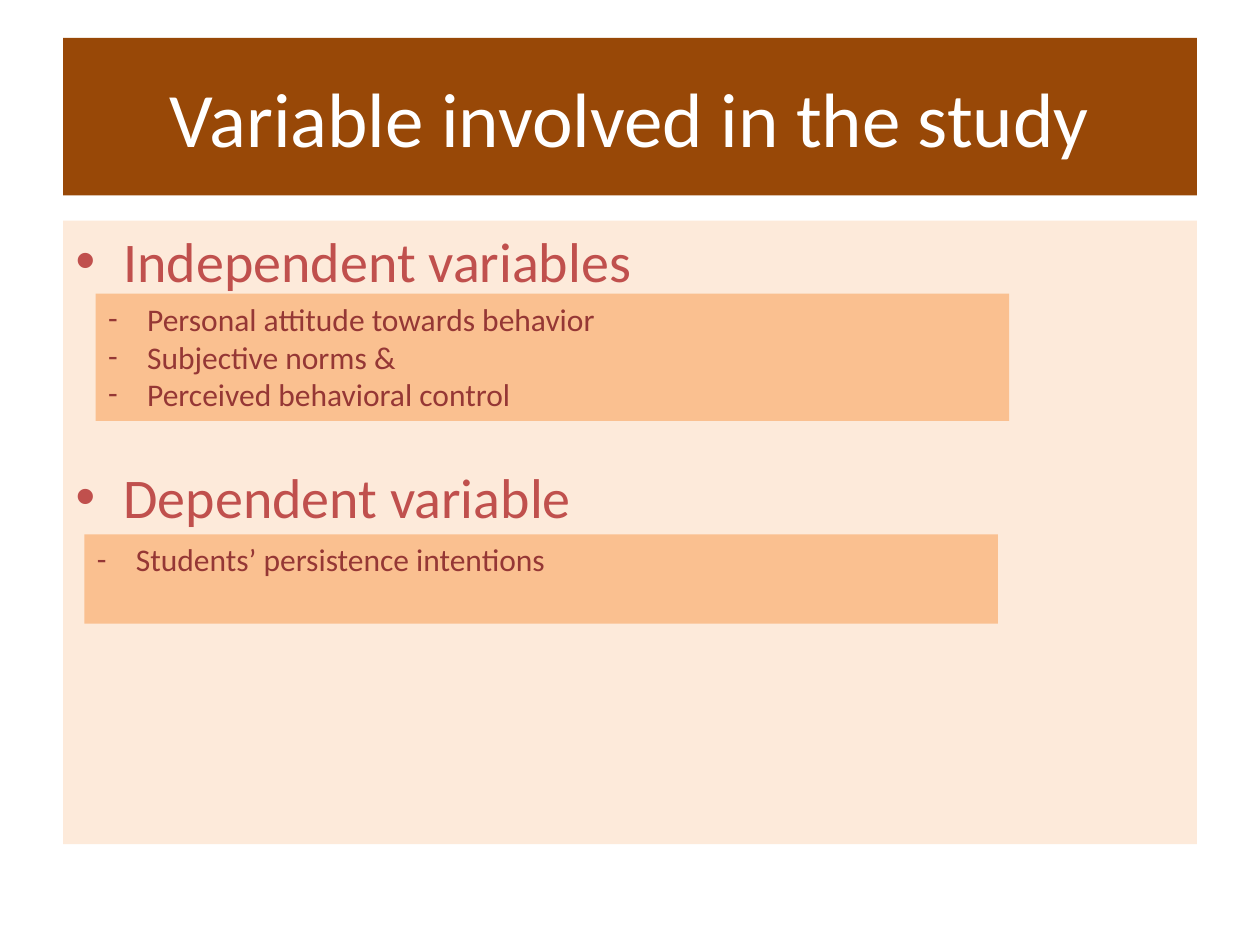
from dataclasses import dataclass

from lxml.etree import SubElement
from pptx import Presentation
from pptx.dml.color import RGBColor
from pptx.enum.shapes import MSO_SHAPE
from pptx.enum.text import MSO_ANCHOR, MSO_AUTO_SIZE, PP_ALIGN
from pptx.oxml.ns import qn
from pptx.util import Inches, Pt


@dataclass(frozen=True)
class Theme:
    font: str = "Calibri"
    banner: str = "984807"
    banner_text: str = "FFFFFF"
    panel: str = "FDEADA"
    heading: str = "C0504D"
    box: str = "FAC090"
    item: str = "953735"
    title_size: int = 44
    heading_size: int = 32
    item_size: int = 18
    heading_gap: int = 96  # room for the item box between two headings


THEME = Theme()
WIDTH, HEIGHT = 10, 7.5
TITLE_BOX = (0.5, 0.3, 9, 1.25)
PANEL_BOX = (0.5, 1.75, 9, 4.95)

# Heading, its items, and the item box relative to the panel
GROUPS = [
    ("Independent variables",
     ["Personal attitude towards behavior", "Subjective norms &",
      "Perceived behavioral control"],
     (0.26, 0.58, 7.25, 1.01)),
    ("Dependent variable",
     ["Students’ persistence intentions"],
     (0.17, 2.49, 7.25, 0.71)),
]


def place(shape, box, fill):
    shape.left, shape.top, shape.width, shape.height = map(Inches, box)
    shape.fill.solid()
    shape.fill.fore_color.rgb = RGBColor.from_string(fill)
    shape.text_frame.word_wrap = True
    shape.text_frame.auto_size = MSO_AUTO_SIZE.NONE


def add_span(para, text, size, color):
    span = para.add_run()
    span.text = text
    span.font.name = THEME.font
    span.font.size = Pt(size)
    span.font.color.rgb = RGBColor.from_string(color)


def set_bullet(para, char, indent, font):
    properties = para._p.get_or_add_pPr()
    properties.set("marL", str(Inches(indent)))
    properties.set("indent", str(-Inches(indent)))
    SubElement(properties, qn("a:buFont")).set("typeface", font)
    SubElement(properties, qn("a:buChar")).set("char", char)


def next_para(frame, index):
    return frame.add_paragraph() if index else frame.paragraphs[0]


def fill_title(title, box):
    place(title, box, THEME.banner)
    title.text_frame.vertical_anchor = MSO_ANCHOR.MIDDLE
    para = title.text_frame.paragraphs[0]
    para.alignment = PP_ALIGN.CENTER
    add_span(para, "Variable involved in the study",
             THEME.title_size, THEME.banner_text)


def add_item_box(page, box, items):
    shape = page.shapes.add_shape(MSO_SHAPE.RECTANGLE, *map(Inches, box))
    place(shape, box, THEME.box)
    shape.shadow.inherit = False
    shape.line.fill.background()
    shape.text_frame.vertical_anchor = MSO_ANCHOR.TOP
    for index, item in enumerate(items):
        para = next_para(shape.text_frame, index)
        para.alignment = PP_ALIGN.LEFT
        set_bullet(para, "-", 0.31, THEME.font)
        add_span(para, item, THEME.item_size, THEME.item)


def fill_panel(page, body, box):
    place(body, box, THEME.panel)
    left, top = box[:2]
    for index, (heading, items, (x, y, width, height)) in enumerate(GROUPS):
        para = next_para(body.text_frame, index)
        if index:
            para.space_before = Pt(THEME.heading_gap)
        set_bullet(para, "•", 0.38, "Arial")
        add_span(para, heading, THEME.heading_size, THEME.heading)
        add_item_box(page, (left + x, top + y, width, height), items)


def main():
    deck = Presentation()
    deck.slide_width, deck.slide_height = Inches(WIDTH), Inches(HEIGHT)
    page = deck.slides.add_slide(deck.slide_layouts[1])
    # Title banner, then the panel with its headings and item boxes
    fill_title(page.shapes.title, TITLE_BOX)
    fill_panel(page, page.placeholders[1], PANEL_BOX)
    deck.save("out.pptx")


if __name__ == "__main__":
    main()
